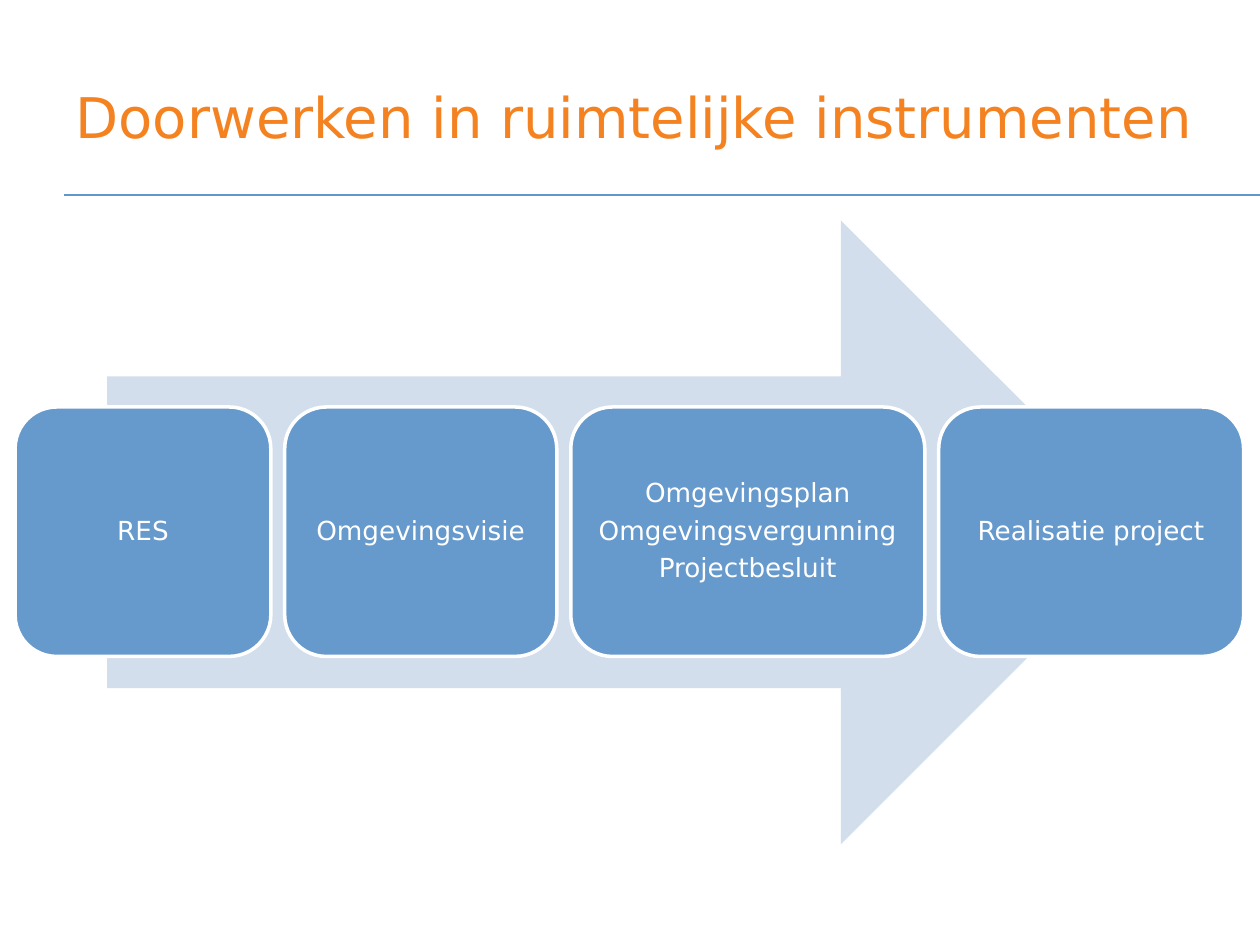
from dataclasses import dataclass

from pptx import Presentation
from pptx.dml.color import RGBColor as RGB
from pptx.enum.shapes import MSO_CONNECTOR as LINK, MSO_SHAPE as SHAPE
from pptx.enum.text import MSO_ANCHOR as ANCHOR, MSO_AUTO_SIZE as FIT, PP_ALIGN as ALIGN
from pptx.oxml import parse_xml
from pptx.oxml.ns import nsdecls
from pptx.util import Inches, Pt


@dataclass(frozen=True)
class Theme:
    font: str = "DejaVu Sans"
    head: RGB = RGB(0xF5, 0x82, 0x20)
    rule: RGB = RGB(0x61, 0x96, 0xCA)
    arrow: RGB = RGB(0xD3, 0xDE, 0xEC)
    step: RGB = RGB(0x66, 0x99, 0xCC)
    white: RGB = RGB(0xFF, 0xFF, 0xFF)
    big: Pt = Pt(32)
    small: Pt = Pt(15)


theme = Theme()


def style(para, size, color, **form):
    """Set paragraph format values and the font of one paragraph."""
    for name, value in form.items():
        setattr(para, name, value)
    para.font.name = theme.font
    para.font.size = size
    para.font.color.rgb = color


deck = Presentation()
deck.slide_width, deck.slide_height = Inches(10), Inches(7.5)
slide = deck.slides.add_slide(deck.slide_layouts[5])
shapes = slide.shapes

# Title
title = shapes.title
title.left, title.top = Inches(0.5), Inches(0.3)
title.width, title.height = Inches(9.22), Inches(1.25)
title.text = "Doorwerken in ruimtelijke instrumenten"
title.text_frame.auto_size = FIT.NONE
title.text_frame.vertical_anchor = ANCHOR.MIDDLE
style(title.text_frame.paragraphs[0], theme.big, theme.head, alignment=ALIGN.LEFT)

# Rule under the title
rule = shapes.add_connector(LINK.STRAIGHT, Inches(0.51), Inches(1.55), Inches(10), Inches(1.55))
rule.line.color.rgb = theme.rule
rule.line.width = Pt(1)
rule._element.spPr.append(parse_xml(f"<a:effectLst {nsdecls('a')}/>"))

# Arrow behind the steps
arrow = shapes.add_shape(SHAPE.RIGHT_ARROW, Inches(0.85), Inches(1.75), Inches(8.3), Inches(4.95))
arrow.shadow.inherit = False
arrow.fill.solid()
arrow.fill.fore_color.rgb = theme.arrow
arrow.line.fill.background()

# Steps, from left to right with equal gaps
steps = [
    (2.03, ["RES"]),
    (2.16, ["Omgevingsvisie"]),
    (2.81, ["Omgevingsplan", "Omgevingsvergunning", "Projectbesluit"]),
    (2.42, ["Realisatie project"]),
]
frame_form = {
    "word_wrap": True,
    "vertical_anchor": ANCHOR.MIDDLE,
    "margin_left": Inches(0.06),
    "margin_right": Inches(0.06),
    "margin_top": Inches(0.06),
    "margin_bottom": Inches(0.06),
}
left, gap = 0.12, 0.11
for width, lines in steps:
    box = shapes.add_shape(SHAPE.ROUNDED_RECTANGLE, Inches(left), Inches(3.23),
                           Inches(width), Inches(1.98))
    box.shadow.inherit = False
    box.fill.solid()
    box.fill.fore_color.rgb = theme.step
    box.line.color.rgb = theme.white
    box.line.width = Pt(2)
    frame = box.text_frame
    for name, value in frame_form.items():
        setattr(frame, name, value)
    frame.text = "\n".join(lines)
    for para in frame.paragraphs:
        style(para, theme.small, theme.white, alignment=ALIGN.CENTER,
              line_spacing=0.9, space_after=Pt(5.25))
    left += width + gap

deck.save("out.pptx")
